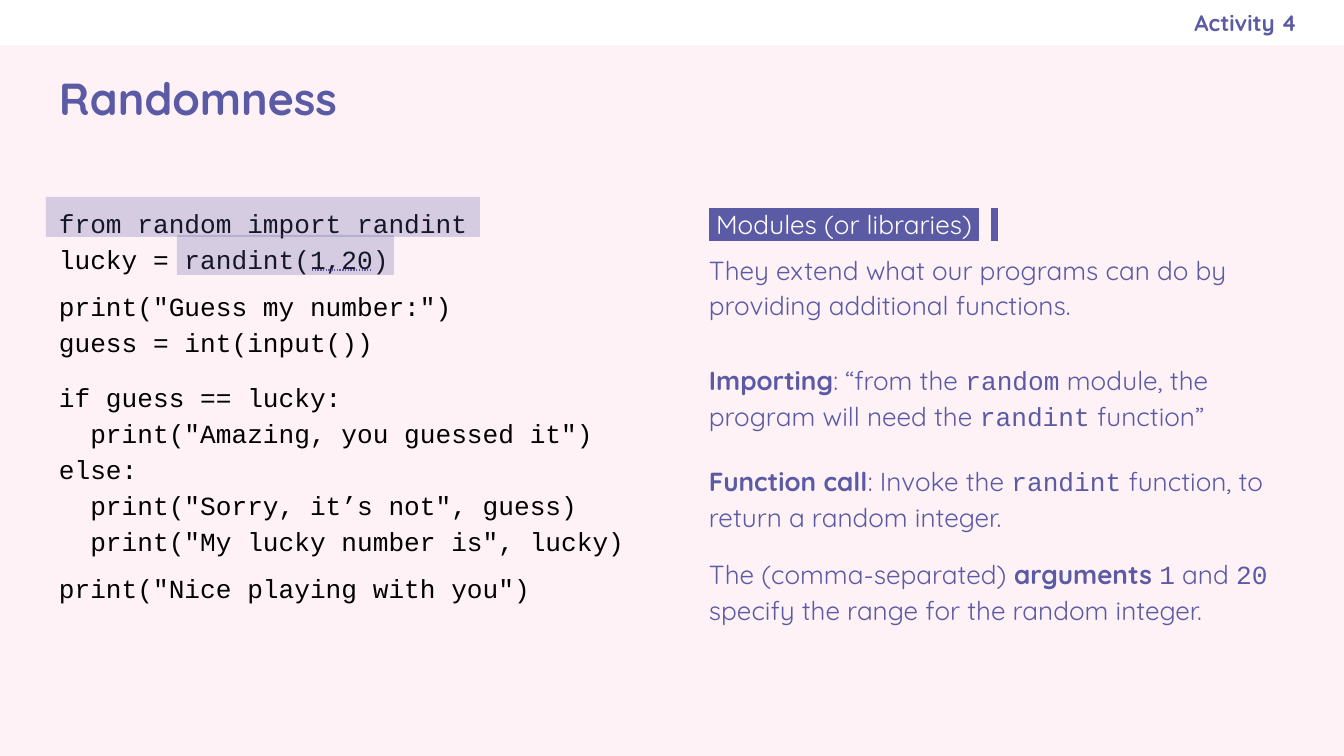
"""Build a slide on random numbers, with code on the left and notes on the right."""
from lxml import etree
from pptx import Presentation
from pptx.dml.color import RGBColor
from pptx.enum.dml import MSO_LINE
from pptx.enum.shapes import MSO_CONNECTOR, MSO_SHAPE
from pptx.enum.text import MSO_ANCHOR, PP_ALIGN
from pptx.oxml.ns import qn
from pptx.util import Emu, Pt

PX = 914400 / 134.4
PURPLE = RGBColor(0x5B, 0x5B, 0xA5)
PINK = RGBColor(0xFE, 0xF2, 0xF6)
WHITE = RGBColor(0xFF, 0xFF, 0xFF)
BLACK = RGBColor(0, 0, 0)
SANS, MONO = "Quicksand", "Courier New"


def add_text(box, paras, size=14, right=8, anchor=MSO_ANCHOR.TOP, align=PP_ALIGN.LEFT):
    frame = slide.shapes.add_textbox(*[Emu(round(n * PX)) for n in box]).text_frame
    frame.word_wrap = True
    frame.vertical_anchor = anchor
    frame.margin_left = frame.margin_top = frame.margin_bottom = Emu(round(13 * PX))
    frame.margin_right = Emu(round(right * PX))
    for i, (space, before, runs) in enumerate(paras):
        para = frame.add_paragraph() if i else frame.paragraphs[0]
        para.alignment = align
        para.line_spacing = space
        para.space_before = Pt(before)
        for words, face, bold, color, mark in runs:
            run = para.add_run()
            run.text = words
            run.font.size = Pt(size)
            run.font.bold = bold
            run.font.color.rgb = color
            run.font.name = face
            if mark:
                light = etree.Element(qn("a:highlight"))
                etree.SubElement(light, qn("a:srgbClr"), val=str(mark))
                run.font._element.find(qn("a:latin")).addprevious(light)


def add_bar(box, color, alpha=100):
    bar = slide.shapes.add_shape(MSO_SHAPE.RECTANGLE, *[Emu(round(n * PX)) for n in box])
    bar.shadow.inherit = False
    bar.fill.solid()
    bar.fill.fore_color.rgb = color
    bar.line.fill.background()
    if alpha < 100:
        tint = bar.fill._xPr.find(qn("a:solidFill"))[0]
        etree.SubElement(tint, qn("a:alpha"), val=str(alpha * 1000))


deck = Presentation()
deck.slide_width, deck.slide_height = Emu(round(1344 * PX)), Emu(round(756 * PX))
slide = deck.slides.add_slide(deck.slide_layouts[6])
slide.background.fill.solid()
slide.background.fill.fore_color.rgb = PINK

add_bar((0, 0, 1344, 45), WHITE)
code = [
    (1.15, 0, "from random import randint"),
    (1.15, 0, "lucky = randint(1,20)"),
    (1.14, 6, 'print("Guess my number:")'),
    (1.15, 0, "guess = int(input())"),
    (1.15, 10, "if guess == lucky:"),
    (1.15, 0, '  print("Amazing, you guessed it")'),
    (1.15, 0, "else:"),
    (1.15, 0, '  print("Sorry, it’s not", guess)'),
    (1.15, 0, '  print("My lucky number is", lucky)'),
    (1.14, 6, 'print("Nice playing with you")'),
]
lines = [(space, before, [(words, MONO, False, BLACK, None)]) for space, before, words in code]
add_text((46, 190, 650, 434), lines, right=13)
add_bar((177, 235, 217, 40), PURPLE, 25)
add_bar((46, 197, 434, 40), PURPLE, 25)

heads = [
    ((773, 0, 524, 45), "Activity 4", 12, 0, PP_ALIGN.RIGHT),
    ((46, 46, 1252, 104), "Randomness", 24, 13, PP_ALIGN.LEFT),
]
for box, words, size, right, align in heads:
    runs = [(words, SANS, True, PURPLE, None)]
    add_text(box, [(1, 0, runs)], size, right, MSO_ANCHOR.MIDDLE, align)

intro = "They extend what our programs can do by providing additional functions."
add_text((696, 191, 601, 140), [
    (1.13, 0, [
        (" Modules (or libraries) ", SANS, False, WHITE, PURPLE),
        (". ", SANS, False, WHITE, None),
        (" ", SANS, False, WHITE, PURPLE),
    ]),
    (1.12, 6, [(intro, SANS, False, PURPLE, None)]),
])

notes = [
    (347, [
        ("Importing", SANS, True),
        (": “from the ", SANS, False),
        ("random", MONO, False),
        (" module, the program will need the ", SANS, False),
        ("randint", MONO, False),
        (" function”", SANS, False),
    ]),
    (448, [
        ("Function call", SANS, True),
        (": Invoke the ", SANS, False),
        ("randint", MONO, False),
        (" function, to return a random integer.", SANS, False),
    ]),
    (541, [
        ("The (comma-separated) ", SANS, False),
        ("arguments ", SANS, True),
        ("1", MONO, False),
        (" and ", SANS, False),
        ("20", MONO, False),
        (" specify the range for the random integer.", SANS, False),
    ]),
]
for top, runs in notes:
    add_text((696, top, 601, 95), [(1.14, 0, [(*run, PURPLE, None) for run in runs])])

ends = [Emu(round(n * PX)) for n in (312, 270, 372, 270)]
rule = slide.shapes.add_connector(MSO_CONNECTOR.STRAIGHT, *ends)
rule.line.color.rgb = PURPLE
rule.line.width = Pt(0.75)
rule.line.dash_style = MSO_LINE.ROUND_DOT
etree.SubElement(rule._element.spPr, qn("a:effectLst"))

deck.save("out.pptx")
